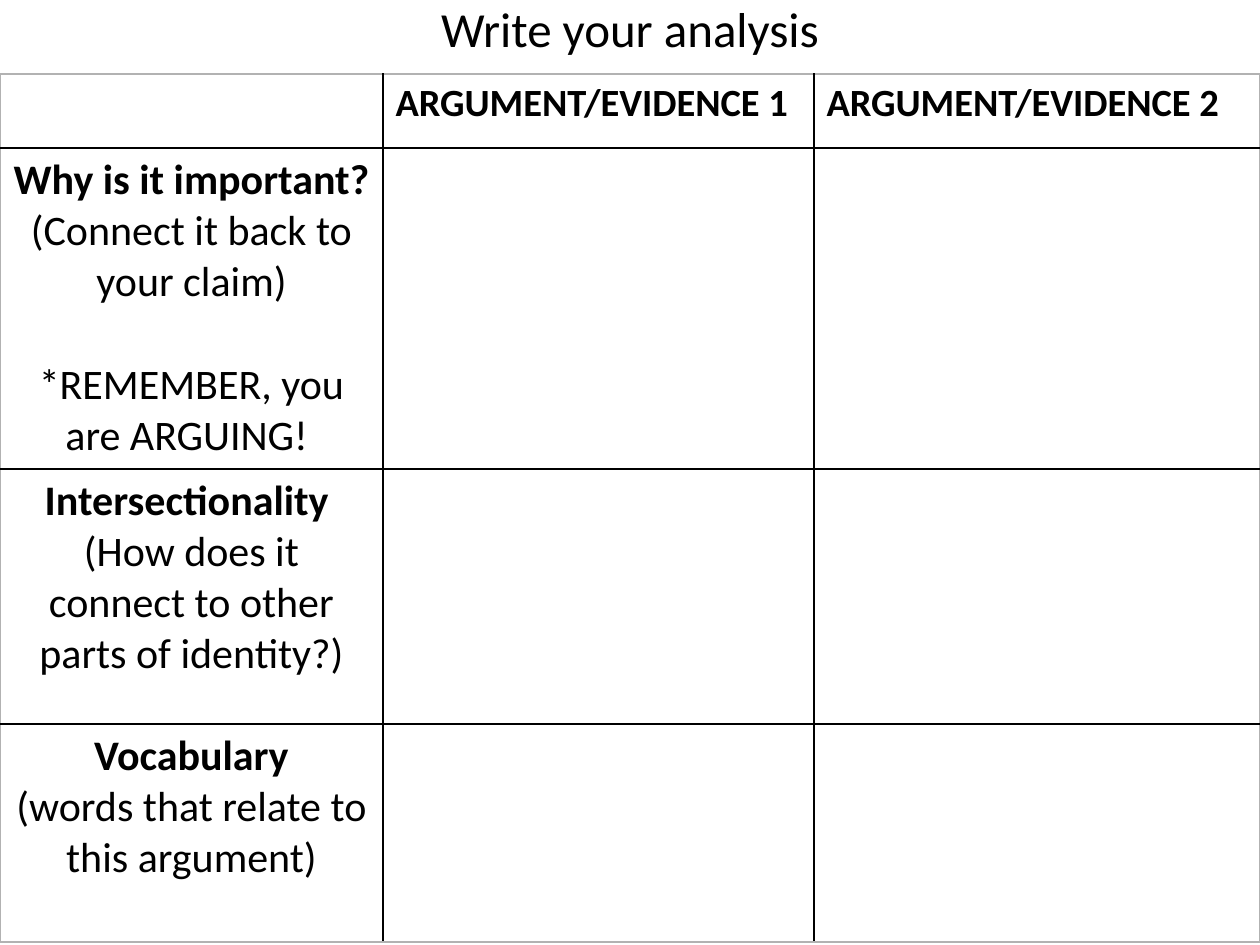
import dataclasses

import lxml.etree
import pptx
import pptx.dml.color
import pptx.enum.text
import pptx.oxml.ns
import pptx.presentation
import pptx.slide
import pptx.table
import pptx.text.text
import pptx.util

EMU_PER_PX = 914400 / 126
Align = pptx.enum.text.PP_ALIGN


@dataclasses.dataclass(frozen=True)
class Theme:
    font: str = "Calibri"
    ink: str = "000000"
    paper: str = "FFFFFF"
    outer_edge: str = "B2B2B2"
    title_size: int = 28
    heading_size: int = 22
    prompt_size: int = 24
    prompt_gap: float = 29.3
    border_width: int = 1


@dataclasses.dataclass(frozen=True)
class Line:
    text: str
    size: int
    bold: bool = False
    align: Align = Align.CENTER
    space_before: float = 0


@dataclasses.dataclass(frozen=True)
class Box:
    left: int
    top: int
    width: int
    height: int

    def lengths(self) -> list[pptx.util.Emu]:
        return [px(value) for value in dataclasses.astuple(self)]


THEME = Theme()
SLIDE_WIDTH, SLIDE_HEIGHT = 1260, 945
TITLE_BOX = Box(63, -18, 1134, 92)
TABLE_TOP = 74
COLUMN_WIDTHS = (383, 431, 446)
ROW_HEIGHTS = (74, 321, 255, 218)


def px(value: int) -> pptx.util.Emu:
    return pptx.util.Emu(round(value * EMU_PER_PX))


def heading(text: str) -> Line:
    return Line(text, THEME.heading_size, bold=True, align=Align.LEFT)


def prompt(text: str, bold: bool = False, space_before: float = 0) -> Line:
    return Line(text, THEME.prompt_size, bold, space_before=space_before)


HEADINGS = (heading("ARGUMENT/EVIDENCE 1"), heading("ARGUMENT/EVIDENCE 2"))
PROMPTS = (
    (
        prompt("Why is it important?", bold=True),
        prompt("(Connect it back to your claim)"),
        prompt("*REMEMBER, you are ARGUING! ", space_before=THEME.prompt_gap),
    ),
    (
        prompt("Intersectionality ", bold=True),
        prompt("(How does it connect to other parts of identity?)"),
    ),
    (
        prompt("Vocabulary", bold=True),
        prompt("(words that relate to this argument)"),
    ),
)


def write_lines(frame: pptx.text.text.TextFrame, lines: tuple[Line, ...]) -> None:
    for index, line in enumerate(lines):
        para = frame.add_paragraph() if index else frame.paragraphs[0]
        para.alignment = line.align
        para.space_before = pptx.util.Pt(line.space_before)
        span = para.add_run()
        span.text = line.text
        span.font.name = THEME.font
        span.font.size = pptx.util.Pt(line.size)
        span.font.bold = line.bold
        span.font.color.rgb = pptx.dml.color.RGBColor.from_string(THEME.ink)


def draw_border(cell: pptx.table._Cell, side: str, color: str) -> None:
    qn = pptx.oxml.ns.qn
    properties = cell._tc.get_or_add_tcPr()
    edge = lxml.etree.SubElement(properties, qn(f"a:ln{side}"))
    edge.set("w", str(pptx.util.Pt(THEME.border_width)))
    fill = lxml.etree.SubElement(edge, qn("a:solidFill"))
    lxml.etree.SubElement(fill, qn("a:srgbClr")).set("val", color)


def style_cell(cell: pptx.table._Cell, row: int, column: int) -> None:
    on_outside = {
        "L": column == 0,
        "R": column == len(COLUMN_WIDTHS) - 1,
        "T": row == 0,
        "B": row == len(ROW_HEIGHTS) - 1,
    }
    for side, outside in on_outside.items():
        draw_border(cell, side, THEME.outer_edge if outside else THEME.ink)
    cell.fill.solid()
    cell.fill.fore_color.rgb = pptx.dml.color.RGBColor.from_string(THEME.paper)


def add_title(slide: pptx.slide.Slide) -> None:
    box = slide.shapes.add_textbox(*TITLE_BOX.lengths())
    box.text_frame.word_wrap = True
    box.text_frame.vertical_anchor = pptx.enum.text.MSO_ANCHOR.MIDDLE
    write_lines(box.text_frame, (Line("Write your analysis", THEME.title_size),))


def add_analysis_table(slide: pptx.slide.Slide) -> None:
    bounds = Box(0, TABLE_TOP, sum(COLUMN_WIDTHS), sum(ROW_HEIGHTS))
    table = slide.shapes.add_table(
        len(ROW_HEIGHTS), len(COLUMN_WIDTHS), *bounds.lengths()
    ).table
    table.first_row = False
    table.horz_banding = False
    for column, width in zip(table.columns, COLUMN_WIDTHS):
        column.width = px(width)
    for row, height in zip(table.rows, ROW_HEIGHTS):
        row.height = px(height)
    for row in range(len(ROW_HEIGHTS)):
        for column in range(len(COLUMN_WIDTHS)):
            style_cell(table.cell(row, column), row, column)
    for column, line in enumerate(HEADINGS, start=1):
        write_lines(table.cell(0, column).text_frame, (line,))
    for row, lines in enumerate(PROMPTS, start=1):
        write_lines(table.cell(row, 0).text_frame, lines)


def main() -> None:
    deck = pptx.Presentation()
    deck.slide_width = px(SLIDE_WIDTH)
    deck.slide_height = px(SLIDE_HEIGHT)
    slide = deck.slides.add_slide(deck.slide_layouts[6])
    add_title(slide)
    add_analysis_table(slide)
    deck.save("out.pptx")


if __name__ == "__main__":
    main()
